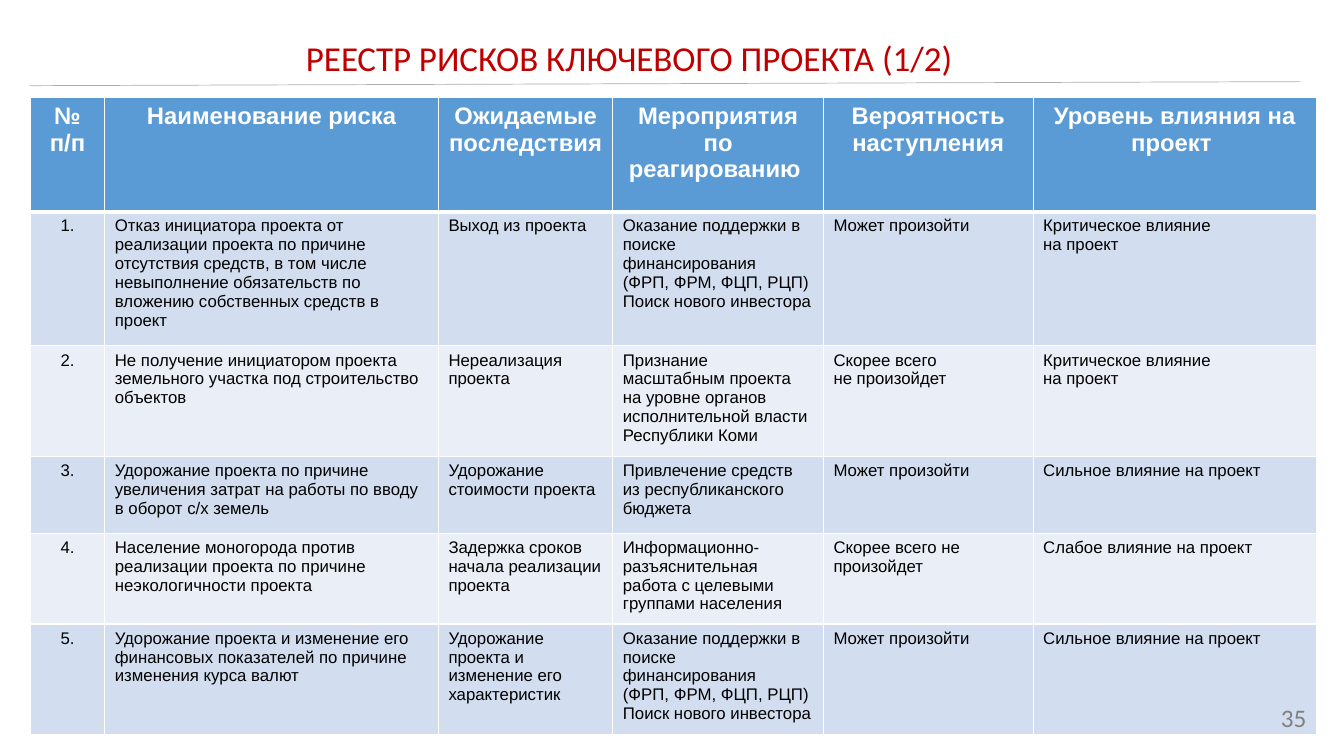
from lxml.etree import SubElement
from pptx import Presentation
from pptx.dml.color import RGBColor
from pptx.enum.shapes import MSO_CONNECTOR as Link
from pptx.enum.text import MSO_ANCHOR as Anchor, MSO_AUTO_SIZE as Fit, PP_ALIGN as Align
from pptx.oxml.ns import qn
from pptx.util import Pt

WHITE, BLACK, RED, GREY, RULE = "FFFFFF", "000000", "C00000", "808080", "AFABAB"
BLUE, PALE, LIGHT = "5B9BD5", "D2DEEF", "EAEFF7"
COLS = [53.28, 238.32, 124.56, 150.48, 149.76, 202.32]
ROWS = [81.36, 95.76, 74, 54.72, 60, 74]
HEAD = ["№ п/п", "Наименование риска", "Ожидаемые последствия ",
        "Мероприятия по реагированию ", "Вероятность наступления",
        "Уровень влияния на проект "]
FUNDS = ("Оказание поддержки в поиске финансирования\n"
         "(ФРП, ФРМ, ФЦП, РЦП)\nПоиск нового инвестора")
MAY = "Может произойти"
GRAVE = "Критическое влияние\nна проект"
STRONG = "Сильное влияние на проект"
RISKS = [
    ["Отказ инициатора проекта от реализации проекта по причине отсутствия средств, "
     "в том числе невыполнение обязательств по вложению собственных средств в проект",
     "Выход из проекта", FUNDS, MAY, GRAVE],
    ["Не получение инициатором проекта земельного участка под строительство объектов",
     "Нереализация проекта",
     "Признание масштабным проекта на уровне органов исполнительной власти Республики Коми",
     "Скорее всего\nне произойдет", GRAVE],
    ["Удорожание проекта по причине увеличения затрат на работы по вводу в оборот с/х земель",
     "Удорожание стоимости проекта",
     "Привлечение средств из республиканского бюджета", MAY, STRONG],
    ["Население моногорода против реализации проекта по причине неэкологичности проекта",
     "Задержка сроков начала реализации проекта",
     "Информационно-разъяснительная работа с целевыми группами населения",
     "Скорее всего не произойдет", "Слабое влияние на проект"],
    ["Удорожание проекта и изменение его финансовых показателей по причине изменения курса валют",
     "Удорожание проекта и изменение его характеристик", FUNDS, MAY, STRONG],
]


def color(code):
    return RGBColor.from_string(code)


def write(frame, text, size, face, code, align, bold=False):
    for i, line in enumerate(text.split("\n")):
        para = frame.paragraphs[0] if i == 0 else frame.add_paragraph()
        para.alignment = align
        run = para.add_run()
        run.text = line
        font = run.font
        font.size, font.name, font.bold = Pt(size), face, bold
        font.color.rgb = color(code)


def place(shape, left, top, width, height):
    shape.left, shape.top = Pt(left), Pt(top)
    shape.width, shape.height = Pt(width), Pt(height)


def border(cell, side, width):
    line = SubElement(cell._tc.get_or_add_tcPr(), qn(f"a:ln{side}"), w=str(Pt(width)))
    fill = SubElement(line, qn("a:solidFill"))
    SubElement(fill, qn("a:srgbClr"), val=WHITE)


def add_title(slide, text):
    title = slide.shapes.title
    place(title, 208.8, 22.32, 486.72, 37.44)
    frame = title.text_frame
    frame.word_wrap = False
    frame.auto_size = Fit.SHAPE_TO_FIT_TEXT
    frame.vertical_anchor = Anchor.TOP
    write(frame, text, 25, "Calibri", RED, Align.CENTER)


def add_rule(slide):
    rule = slide.shapes.add_connector(Link.STRAIGHT, Pt(21.6), Pt(61.2), Pt(928.8), Pt(58.32))
    rule.line.color.rgb = color(RULE)
    rule.line.width = Pt(0.5)
    SubElement(rule._element.spPr, qn("a:effectLst"))


def add_grid(slide):
    rows = [HEAD] + [[f"{n}.", *risk] for n, risk in enumerate(RISKS, 1)]
    grid = slide.shapes.add_table(len(rows), len(COLS), Pt(21.6), Pt(69.84),
                                  Pt(sum(COLS)), Pt(sum(ROWS))).table
    for col, width in zip(grid.columns, COLS):
        col.width = Pt(width)
    for r, texts in enumerate(rows):
        grid.rows[r].height = Pt(ROWS[r])
        for c, text in enumerate(texts):
            cell = grid.cell(r, c)
            for side in "LRTB":
                thick = (r, side) in [(0, "B"), (1, "T")]
                border(cell, side, 3 if thick else 1)
            cell.fill.solid()
            cell.fill.fore_color.rgb = color(BLUE if r == 0 else PALE if r % 2 else LIGHT)
            align = Align.CENTER if r == 0 or c == 0 else Align.LEFT
            size, code = (17, WHITE) if r == 0 else (12, BLACK)
            write(cell.text_frame, text, size, "Arial", code, align, r == 0)


def add_number(slide, text):
    box = slide.shapes.add_textbox(Pt(724.32), Pt(498.24), Pt(216), Pt(28.8))
    frame = box.text_frame
    frame.word_wrap = True
    frame.vertical_anchor = Anchor.MIDDLE
    write(frame, text, 18, "Calibri", GREY, Align.RIGHT)


def main():
    deck = Presentation()
    deck.slide_width, deck.slide_height = Pt(960), Pt(540)
    slide = deck.slides.add_slide(deck.slide_layouts[5])
    add_grid(slide)
    add_title(slide, "РЕЕСТР РИСКОВ КЛЮЧЕВОГО ПРОЕКТА (1/2) ")
    add_rule(slide)
    add_number(slide, "35")
    deck.save("out.pptx")


if __name__ == "__main__":
    main()
